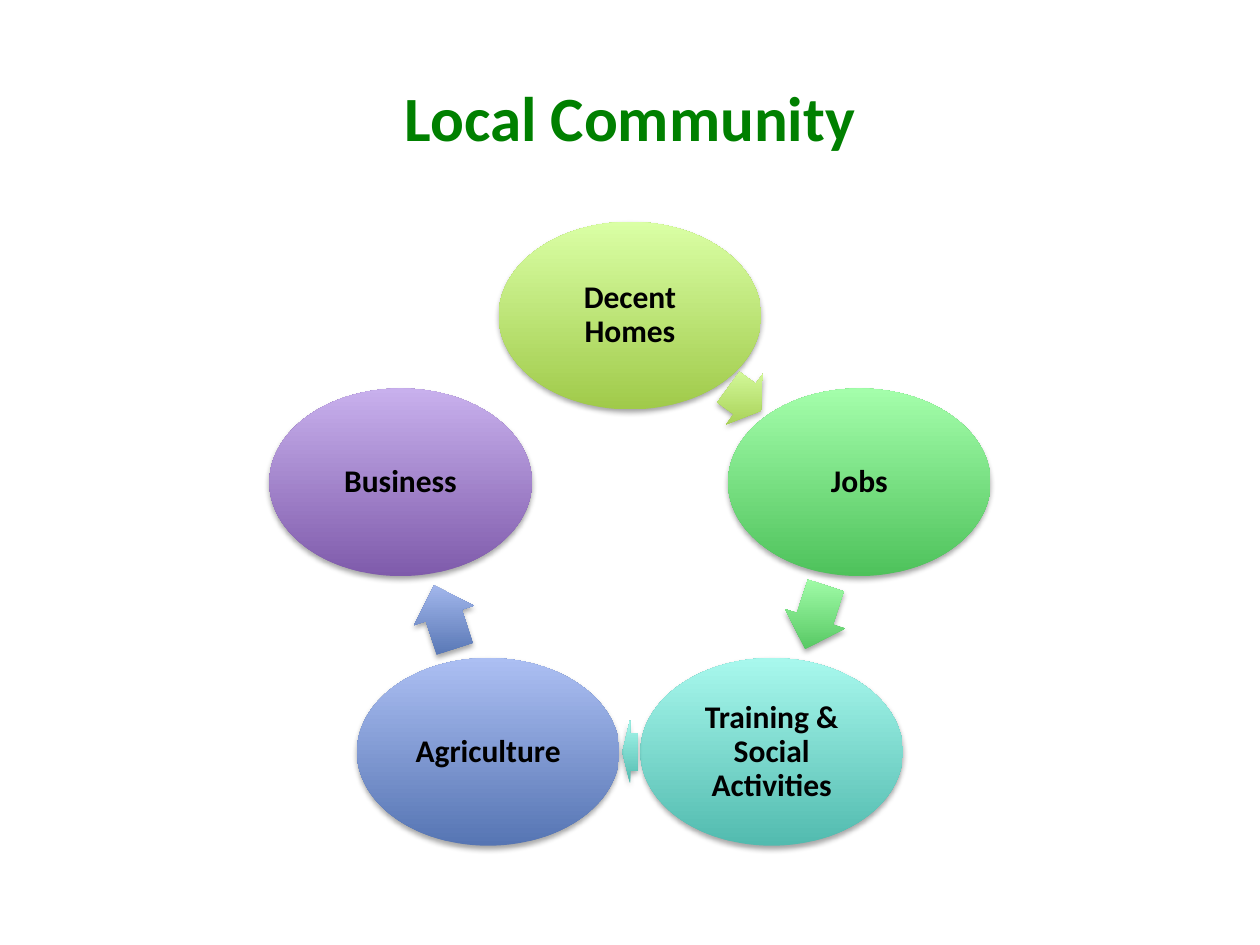
"""Build the Local Community cycle slide."""
from math import cos, radians, sin

from lxml.etree import SubElement
from pptx import Presentation
from pptx.dml.color import RGBColor
from pptx.enum.shapes import MSO_SHAPE
from pptx.enum.text import MSO_ANCHOR, PP_ALIGN
from pptx.oxml.ns import qn
from pptx.util import Pt

TITLE = "Local Community"
TITLE_COLOR = RGBColor(0x00, 0x80, 0x00)
BLACK = RGBColor(0x00, 0x00, 0x00)
STAGES = [
    ("Decent Homes", RGBColor(0xA0, 0xCA, 0x4A), RGBColor(0xDA, 0xFF, 0xA5), 23),
    ("Jobs", RGBColor(0x4E, 0xC2, 0x5B), RGBColor(0xA4, 0xFE, 0xAB), 38),
    ("Training & Social Activities", RGBColor(0x52, 0xBB, 0xAF), RGBColor(0xA8, 0xF8, 0xED), 8.7),
    ("Agriculture", RGBColor(0x56, 0x75, 0xB3), RGBColor(0xAC, 0xBF, 0xF3), 38),
    ("Business", RGBColor(0x7F, 0x5B, 0xAB), RGBColor(0xC8, 0xB0, 0xED), None),
]

FONT = "Calibri"
CENTER_X, CENTER_Y, RADIUS = 360, 318.2, 137.8
OVAL_WIDTH, OVAL_HEIGHT = 150, 107.2
ARROW_HEIGHT = 36
STEP = 360 / len(STAGES)


def write(shape, text, size, color):
    frame = shape.text_frame
    frame.text = text
    frame.word_wrap = True
    frame.vertical_anchor = MSO_ANCHOR.MIDDLE
    para = frame.paragraphs[0]
    para.alignment = PP_ALIGN.CENTER
    font = para.runs[0].font
    font.name, font.size, font.bold = FONT, Pt(size), True
    font.color.rgb = color
    return frame


def add_shadow(shape):
    effects = SubElement(shape._element.spPr, qn("a:effectLst"))
    shadow = SubElement(effects, qn("a:outerShdw"), blurRad=str(Pt(3.1)),
                        dist=str(Pt(1.8)), dir="5400000", rotWithShape="0")
    black = SubElement(shadow, qn("a:srgbClr"), val="000000")
    SubElement(black, qn("a:alpha"), val="35000")


def add_glossy(page, kind, center, width, height, dark, light):
    x, y = center
    shape = page.shapes.add_shape(kind, Pt(x - width / 2), Pt(y - height / 2),
                                  Pt(width), Pt(height))
    shape.fill.gradient()
    shape.fill.gradient_angle = 90
    for stop, color in zip(shape.fill.gradient_stops, (dark, light)):
        stop.color.rgb = color
    shape._element.spPr.find(qn("a:gradFill")).set("rotWithShape", "0")
    shape.line.fill.background()
    add_shadow(shape)
    return shape


def ring_point(index):
    angle = radians(index * STEP - 90)
    return CENTER_X + RADIUS * cos(angle), CENTER_Y + RADIUS * sin(angle)


def main():
    deck = Presentation()
    deck.slide_width, deck.slide_height = Pt(720), Pt(540)
    page = deck.slides.add_slide(deck.slide_layouts[6])

    title = page.shapes.add_textbox(Pt(36), Pt(21.6), Pt(648), Pt(90))
    write(title, TITLE, 36, TITLE_COLOR)

    for index, (label, dark, light, arrow_length) in enumerate(STAGES):
        here, following = ring_point(index), ring_point(index + 1)
        oval = add_glossy(page, MSO_SHAPE.OVAL, here, OVAL_WIDTH, OVAL_HEIGHT, dark, light)
        frame = write(oval, label, 18, BLACK)
        frame.margin_left = frame.margin_right = Pt(2)
        frame.margin_top = frame.margin_bottom = Pt(2)
        frame.paragraphs[0].line_spacing = 0.9
        if arrow_length:
            middle = [(a + b) / 2 for a, b in zip(here, following)]
            arrow = add_glossy(page, MSO_SHAPE.RIGHT_ARROW, middle, arrow_length,
                               ARROW_HEIGHT, dark, light)
            arrow.adjustments[0], arrow.adjustments[1] = 0.6, 0.5
            arrow.rotation = (index + 0.5) * STEP

    deck.save("out.pptx")


if __name__ == "__main__":
    main()
